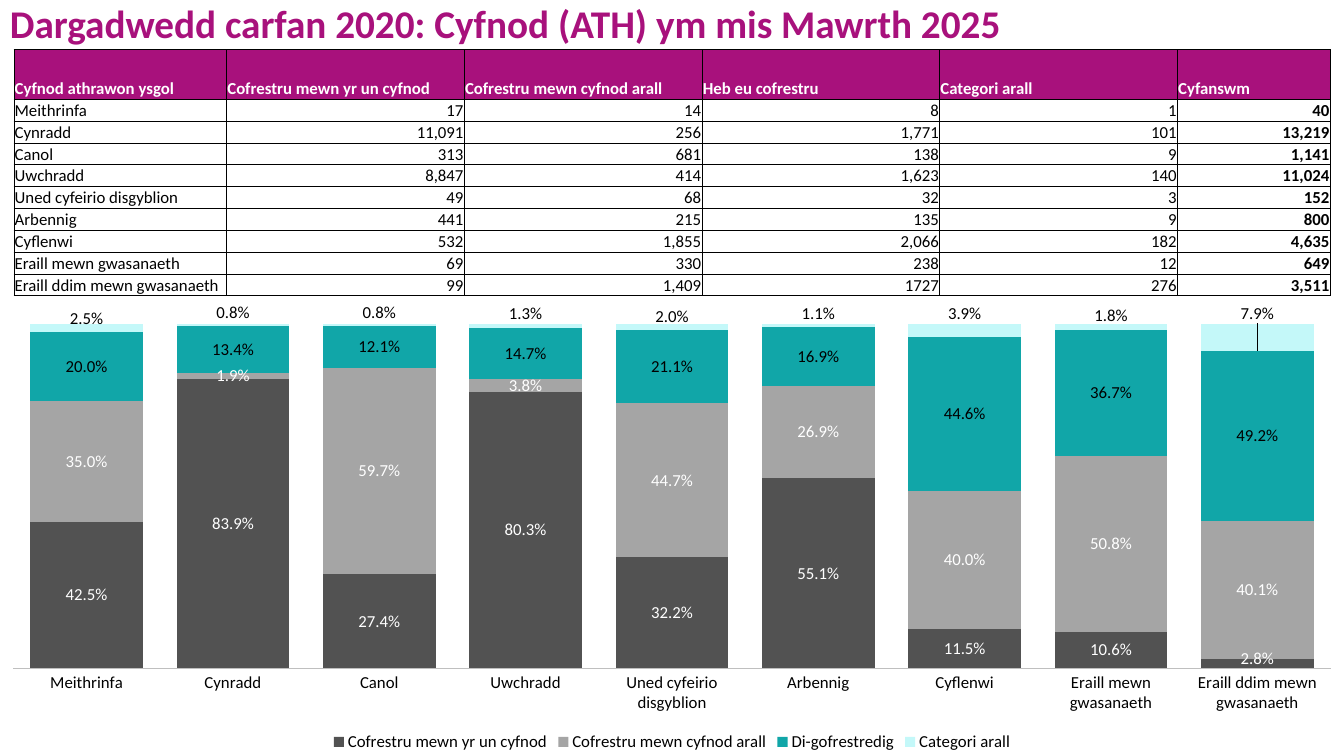
import pptx
import pptx.chart.data
import pptx.dml.color
import pptx.enum.chart
import pptx.enum.text
import pptx.oxml.ns
import pptx.util
from lxml import etree

Cm, Pt = pptx.util.Cm, pptx.util.Pt
RGBColor = pptx.dml.color.RGBColor
qn = pptx.oxml.ns.qn
Place = pptx.enum.chart.XL_LABEL_POSITION
Align = pptx.enum.text.PP_ALIGN

PLUM = RGBColor(0xA8, 0x11, 0x7C)
WHITE = RGBColor(0xFF, 0xFF, 0xFF)
BLACK = RGBColor(0, 0, 0)
DARK = RGBColor(0x52, 0x52, 0x52)
GREY = RGBColor(0xA5, 0xA5, 0xA5)
TEAL = RGBColor(0x11, 0xA6, 0xA8)
PALE = RGBColor(0xC4, 0xF8, 0xF9)
RULE = RGBColor(0xBF, 0xBF, 0xBF)

HEADS = ["Cyfnod athrawon ysgol", "Cofrestru mewn yr un cyfnod",
         "Cofrestru mewn cyfnod arall", "Heb eu cofrestru",
         "Categori arall", "Cyfanswm"]
ROWS = [
    ["Meithrinfa", "17", "14", "8", "1", "40"],
    ["Cynradd", "11,091", "256", "1,771", "101", "13,219"],
    ["Canol", "313", "681", "138", "9", "1,141"],
    ["Uwchradd", "8,847", "414", "1,623", "140", "11,024"],
    ["Uned cyfeirio disgyblion", "49", "68", "32", "3", "152"],
    ["Arbennig", "441", "215", "135", "9", "800"],
    ["Cyflenwi", "532", "1,855", "2,066", "182", "4,635"],
    ["Eraill mewn gwasanaeth", "69", "330", "238", "12", "649"],
    ["Eraill ddim mewn gwasanaeth", "99", "1,409", "1727", "276", "3,511"],
]
# name, values, fill, label colour, label place
SERIES = [
    ("Cofrestru mewn yr un cyfnod",
     [0.425, 0.839, 0.274, 0.803, 0.322, 0.551, 0.115, 0.106, 0.028],
     DARK, WHITE, Place.CENTER),
    ("Cofrestru mewn cyfnod arall",
     [0.35, 0.019, 0.597, 0.038, 0.447, 0.269, 0.4, 0.508, 0.401],
     GREY, WHITE, Place.CENTER),
    ("Di-gofrestredig",
     [0.2, 0.134, 0.121, 0.147, 0.211, 0.169, 0.446, 0.367, 0.492],
     TEAL, BLACK, Place.CENTER),
    ("Categori arall",
     [0.025, 0.008, 0.008, 0.013, 0.02, 0.011, 0.039, 0.018, 0.079],
     PALE, BLACK, Place.INSIDE_BASE),
]
# series, point, upward shift of its label as a share of chart height
SHIFTS = [(0, 8, -0.01), (3, 6, -0.02), (3, 8, -0.05)]


def style(font, color, size=12, bold=False):
    font.name, font.size, font.bold = "Calibri", Pt(size), bold
    font.color.rgb = color


def arrange(parent, index, **parts):
    """Insert a manual chart layout at the given child index."""
    layout = etree.Element(qn("c:layout"))
    manual = etree.SubElement(layout, qn("c:manualLayout"))
    for tag, val in parts.items():
        etree.SubElement(manual, qn("c:" + tag)).set("val", str(val))
    parent.insert(index, layout)


deck = pptx.Presentation()
deck.slide_width, deck.slide_height = Cm(33.87), Cm(19.05)
slide = deck.slides.add_slide(deck.slide_layouts[6])

# Title
title = slide.shapes.add_textbox(0, 0, Cm(32.77), Cm(1.4)).text_frame
title.word_wrap = True
para = title.paragraphs[0]
para.text = "Dargadwedd carfan 2020: Cyfnod (ATH) ym mis Mawrth 2025"
para.line_spacing = 0.9
style(para.font, PLUM, 28, True)

# Table
table = slide.shapes.add_table(len(ROWS) + 1, len(HEADS), Cm(0.35), Cm(1.25),
                               Cm(33.17), Cm(6.2)).table
table.horz_banding = False
for col, width in zip(table.columns, [5.36] + [5.99] * 4 + [3.85]):
    col.width = Cm(width)
for r, texts in enumerate([HEADS] + ROWS):
    table.rows[r].height = Cm(0.55 if r else 1.25)
    for c, text in enumerate(texts):
        cell = table.cell(r, c)
        cell.margin_left = cell.margin_right = cell.margin_top = Cm(0.02)
        cell.margin_bottom = 0
        cell.vertical_anchor = pptx.enum.text.MSO_ANCHOR.BOTTOM
        props = cell._tc.get_or_add_tcPr()
        for side in ("lnL", "lnR", "lnT", "lnB"):
            line = etree.SubElement(props, qn("a:" + side), w=str(Pt(0.5)))
            fill = etree.SubElement(line, qn("a:solidFill"))
            etree.SubElement(fill, qn("a:srgbClr"), val=str(BLACK))
        if r:
            cell.fill.background()
        else:
            cell.fill.solid()
            cell.fill.fore_color.rgb = PLUM
        para = cell.text_frame.paragraphs[0]
        para.text = text
        para.alignment = Align.RIGHT if r and c else Align.LEFT
        style(para.font, BLACK if r else WHITE,
              bold=r == 0 or c == len(HEADS) - 1)

# Chart
data = pptx.chart.data.CategoryChartData(number_format="0.0%")
data.categories = [row[0] for row in ROWS]
for name, vals, *_ in SERIES:
    data.add_series(name, vals)
chart = slide.shapes.add_chart(
    pptx.enum.chart.XL_CHART_TYPE.COLUMN_STACKED_100,
    0, Cm(7.46), Cm(33.87), Cm(11.59), data).chart
style(chart.font, BLACK)
chart.has_title = False
chart.has_legend = True
chart.legend.position = pptx.enum.chart.XL_LEGEND_POSITION.BOTTOM
chart.legend.include_in_layout = False
style(chart.legend.font, BLACK)

cats = chart.category_axis
cats.major_tick_mark = pptx.enum.chart.XL_TICK_MARK.NONE
cats.format.line.color.rgb = RULE
cats.format.line.width = Pt(0.75)
style(cats.tick_labels.font, BLACK)
chart.value_axis.visible = False
chart.value_axis.has_major_gridlines = False

plot = chart.plots[0]
plot.gap_width, plot.overlap = 30, 100
plot.vary_by_categories = False
for series, (_, _, color, ink, place) in zip(plot.series, SERIES):
    series.format.fill.solid()
    series.format.fill.fore_color.rgb = color
    labels = series.data_labels
    labels.show_value = True
    labels.number_format = "0.0%"
    labels.number_format_is_linked = False
    labels.position = place
    style(labels.font, ink)
for s, p, shift in SHIFTS:
    label = plot.series[s].points[p].data_label
    style(label.font, SERIES[s][3])
    label.position = SERIES[s][4]
    arrange(label._get_or_add_dLbl(), 1, x=0, y=shift)

area = chart._chartSpace.chart.plotArea
for old in area.findall(qn("c:layout")):
    area.remove(old)
arrange(area, 0, layoutTarget="inner", xMode="edge", yMode="edge",
        x=0.01, y=0.06, w=0.98, h=0.75)

deck.save("out.pptx")
